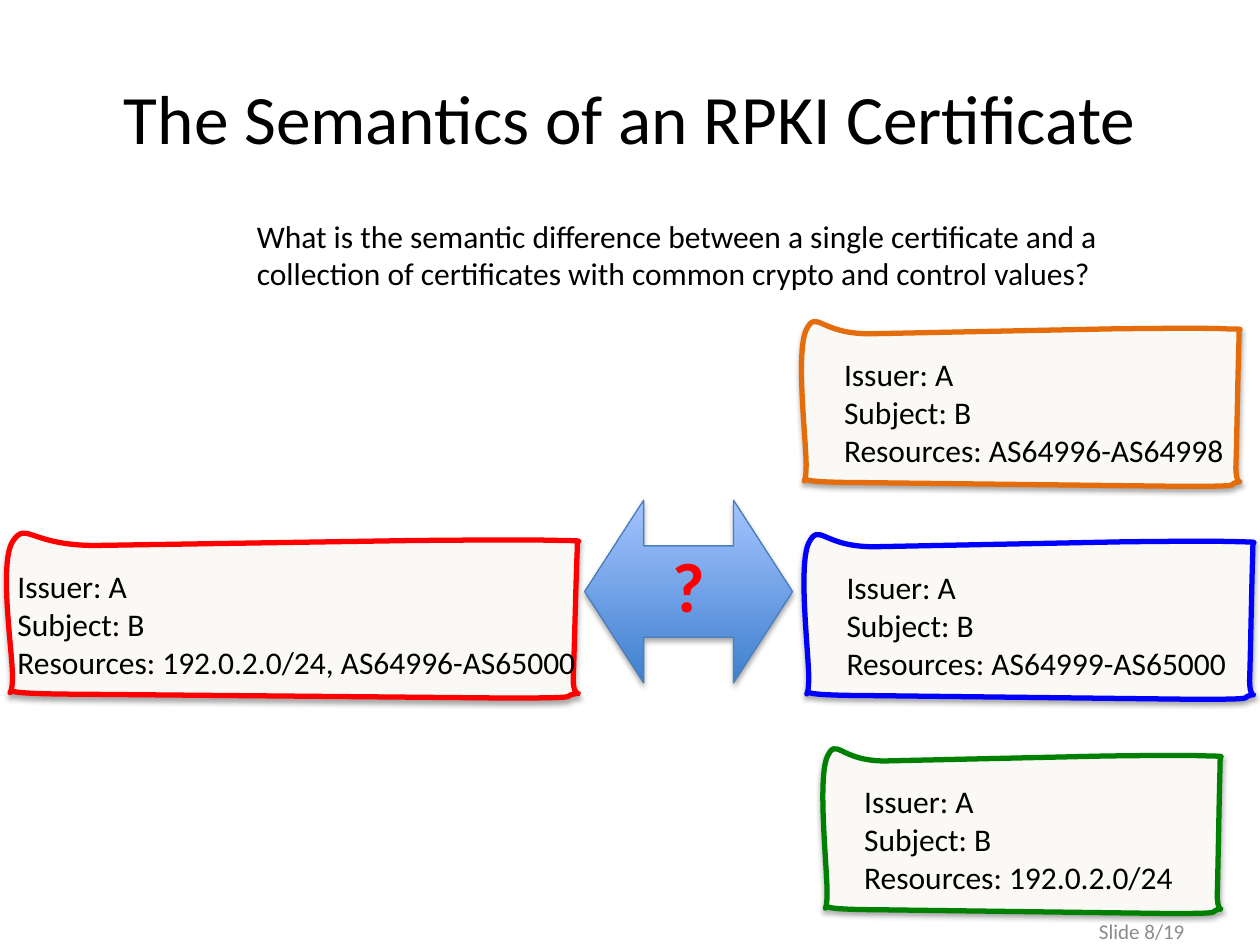
from lxml.etree import SubElement
from pptx import Presentation
from pptx.dml.color import RGBColor
from pptx.enum.shapes import MSO_SHAPE
from pptx.enum.text import MSO_ANCHOR, MSO_AUTO_SIZE, PP_ALIGN
from pptx.oxml.ns import qn
from pptx.util import Inches, Pt

CARD_START = (11, 53)
CARD_EDGES = [
    [(-13, 191), (11, 718), (11, 870)],
    [(11, 1023), (-2, 947), (15, 962)],
    [(35, 977), (128, 977), (128, 977)],
    [(870, 1000)],
    [(1015, 1000), (971, 992), (991, 977)],
    [(1013, 954), (991, 1023), (991, 885)],
    [(993, 740), (996, 260), (998, 122)],
    [(998, -8), (1002, 76), (998, 61)],
    [(993, 53), (1020, 46), (971, 46)],
    [(923, 38), (705, 46), (705, 46)],
    [(156, 76)],
    [(40, 76), (35, -76), CARD_START],
]
CARD_HEIGHT = 13.1
CERTIFICATES = [
    (63.6, 25.5, 34.8, "E46C0A", 2.4, 32.5, "AS64996-AS64998"),
    (63.8, 42.4, 35.7, "0000FF", 2.4, 32.5, "AS64999-AS65000"),
    (65.3, 59.4, 31.6, "008000", 2.3, 26.9, "192.0.2.0/24"),
    (0.5, 42.3, 45.4, "FF0000", -0.1, 46.9, "192.0.2.0/24, AS64996-AS65000"),
]


def color(code):
    """Turn a hex string into a colour."""
    return RGBColor.from_string(code)


def assign(target, values):
    """Set each named attribute of the target."""
    for name, value in values.items():
        setattr(target, name, value)


class Deck:
    """Style and current slide, measured on a grid of 100 columns by 75 rows."""

    font = "Calibri"
    paper = "FAF9F6"

    def __init__(self):
        """Open a blank slide."""
        self.show = Presentation()
        assign(self.show, {"slide_width": Inches(10), "slide_height": Inches(7.5)})
        self.column = self.show.slide_width / 100
        self.row = self.show.slide_height / 75
        self.shapes = self.show.slides.add_slide(self.show.slide_layouts[6]).shapes

    def box(self, left, top, width, height):
        """Convert grid cells to lengths."""
        return (round(left * self.column), round(top * self.row),
                round(width * self.column), round(height * self.row))

    def text(self, place, lines, size=18, ink="000000", bold=None, wrap=False,
             align=None, anchor=MSO_ANCHOR.TOP, fit=MSO_AUTO_SIZE.SHAPE_TO_FIT_TEXT):
        """Add a text box with one paragraph per line."""
        frame = self.shapes.add_textbox(*self.box(*place)).text_frame
        assign(frame, {"word_wrap": wrap, "vertical_anchor": anchor, "auto_size": fit,
                       "text": "\n".join(lines)})
        for paragraph in frame.paragraphs:
            paragraph.alignment = align
            assign(paragraph.runs[0].font, {"name": self.font, "size": Pt(size), "bold": bold})
            paragraph.runs[0].font.color.rgb = color(ink)

    def finish(self, shape, ink, width):
        """Give a shape its line and soft shadow."""
        shape.line.color.rgb = color(ink)
        shape.line.width = Pt(width)
        shape.shadow.inherit = False
        effects = shape._element.spPr.find(qn("a:effectLst"))
        shadow = SubElement(effects, qn("a:outerShdw"), blurRad="40000", dist="23000",
                            dir="5400000", rotWithShape="0")
        tint = SubElement(shadow, qn("a:srgbClr"), val="000000")
        SubElement(tint, qn("a:alpha"), val="35000")

    def card(self, left, top, width, ink):
        """Add a curled certificate card with curved edges."""
        builder = self.shapes.build_freeform(*CARD_START)
        builder.add_line_segments([edge[-1] for edge in CARD_EDGES], close=True)
        card = builder.convert_to_shape()
        assign(card, dict(zip(("left", "top", "width", "height"),
                              self.box(left, top, width, CARD_HEIGHT))))
        outline = next(card._element.iter(qn("a:path")))
        outline.clear()
        assign(outline, {"w": 1000, "h": 1000})
        for kind, points in [("a:moveTo", [CARD_START])] + [
                ("a:cubicBezTo" if len(edge) == 3 else "a:lnTo", edge) for edge in CARD_EDGES]:
            segment = SubElement(outline, qn(kind))
            for x, y in points:
                SubElement(segment, qn("a:pt"), x=str(x), y=str(y))
        SubElement(outline, qn("a:close"))
        card.fill.solid()
        card.fill.fore_color.rgb = color(self.paper)
        self.finish(card, ink, 3)

    def double_arrow(self, place, stops, ink):
        """Add a two-headed block arrow with a vertical gradient."""
        arrow = self.shapes.add_shape(MSO_SHAPE.LEFT_RIGHT_ARROW, *self.box(*place))
        arrow.adjustments[0], arrow.adjustments[1] = 0.5, 0.323
        arrow.fill.gradient()
        arrow.fill.gradient_angle = 90
        for position, (stop, code) in enumerate(zip(arrow.fill.gradient_stops, stops)):
            stop.color.rgb = color(code)
            stop.position = position
        self.finish(arrow, ink, 0.75)


def main():
    """Build the certificate comparison."""
    deck = Deck()
    deck.double_arrow((46.4, 39.7, 16.5, 14.5), ("3F80CE", "A4C4FF"), "4B7EBC")
    middle = {"wrap": True, "anchor": MSO_ANCHOR.MIDDLE, "fit": MSO_AUTO_SIZE.NONE}
    deck.text((5, 3, 90, 12.5), ["The Semantics of an RPKI Certificate"], 39.6,
              align=PP_ALIGN.CENTER, **middle)
    for left, top, width, ink, inset, text_width, resources in CERTIFICATES:
        deck.card(left, top, width, ink)
        deck.text((left + inset, top + 2.2, text_width, 10.1),
                  ["Issuer: A", "Subject: B", f"Resources: {resources}"])
    deck.text((52.4, 42.6, 4.6, 7.7), ["?"], 40, "FF0000", bold=True)
    deck.text((19.4, 16.7, 73.3, 7.1),
              ["What is the semantic difference between a single certificate and a "
               "collection of certificates with common crypto and control values?"], wrap=True)
    deck.text((71.7, 71.9, 23.3, 4), ["Slide 8/19"], 12, "8C8C8C",
              align=PP_ALIGN.RIGHT, **middle)
    deck.show.save("out.pptx")


if __name__ == "__main__":
    main()
